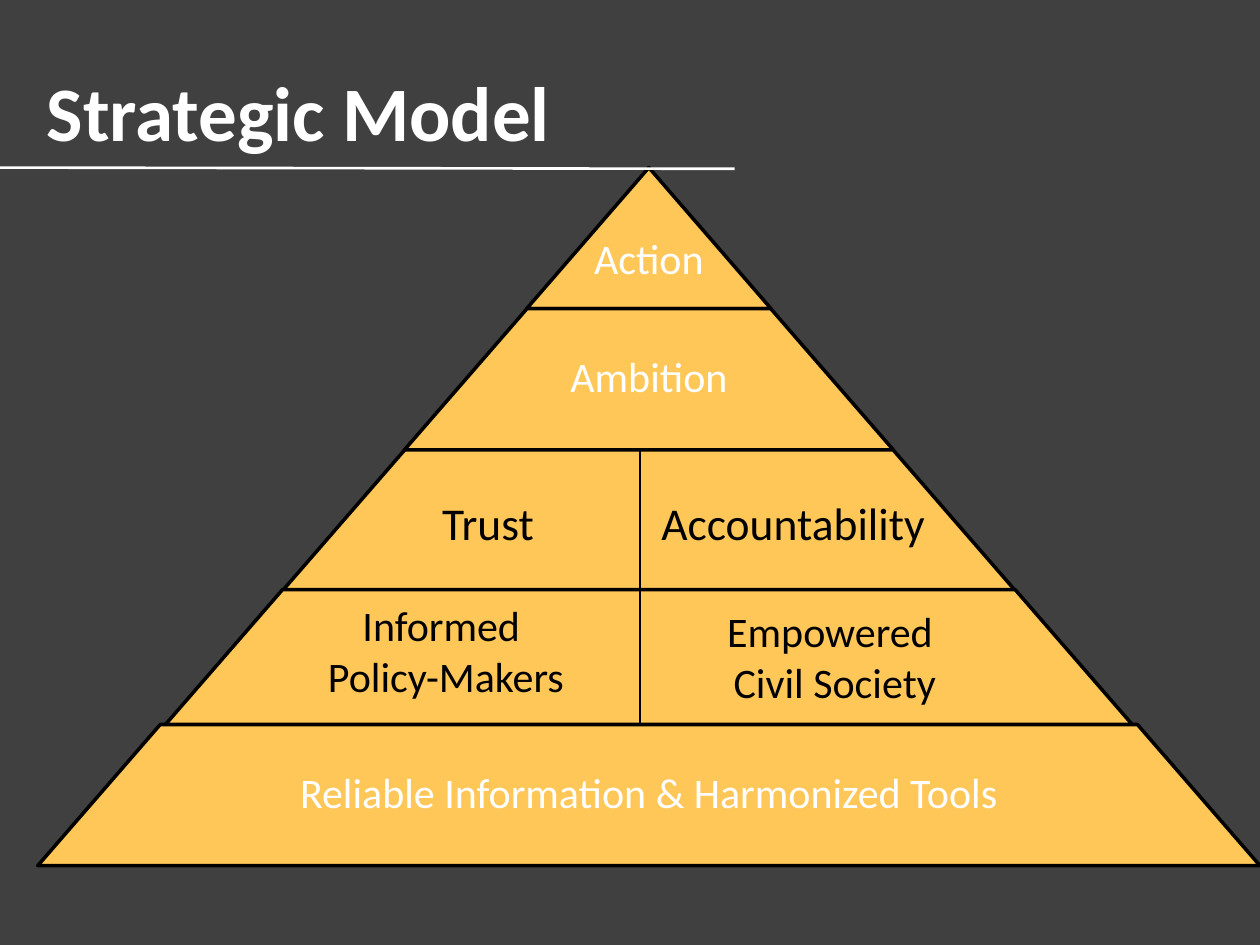
import pptx
import pptx.util
import pptx.dml.color
import pptx.enum.shapes
import pptx.enum.text
import pptx.oxml.ns
import lxml.etree

EMU_PER_PX = 9144
FONT = "Calibri"
CHARCOAL = pptx.dml.color.RGBColor(0x40, 0x40, 0x40)
AMBER = pptx.dml.color.RGBColor(0xFF, 0xC7, 0x58)
WHITE = pptx.dml.color.RGBColor(0xFF, 0xFF, 0xFF)
BLACK = pptx.dml.color.RGBColor(0x00, 0x00, 0x00)

TIER_STEP = 194
TIER_HEIGHT = 112
TIER_TOPS = (0, 112, 224, 335, 442)
TIER_SLOPE = 0.868
TIER_LABELS = (
    (0, "Action", 194, 39),
    (1, "Ambition", 252, 3),
    (4, "Reliable Information & Harmonized Tools", 630, 3),
)
HALF_LABELS = (
    ("Trust ", 278, 255, 167, 54, 26, True),
    ("Accountability", 462, 255, 275, 54, 26, True),
    ("Informed \nPolicy-Makers", 219, 338, 210, 91, 24, False),
    ("Empowered \nCivil Society", 478, 343, 309, 91, 24, True),
)
DIVIDERS = ((225, 334, 0.75), (334, 442, 1))


def px(length):
    return pptx.util.Emu(length * EMU_PER_PX)


def format_text(frame, size, color, bold=False):
    for paragraph in frame.paragraphs:
        paragraph.alignment = pptx.enum.text.PP_ALIGN.CENTER
        for run in paragraph.runs:
            run.font.name = FONT
            run.font.size = pptx.util.Pt(size)
            run.font.bold = bold
            run.font.color.rgb = color


def add_text(slide, text, left, top, width, height, size, color, wrap=True):
    shape = slide.shapes.add_textbox(px(left), px(top), px(width), px(height))
    frame = shape.text_frame
    frame.text = text
    frame.word_wrap = wrap
    format_text(frame, size, color)
    return frame


def add_line(slide, start, end, color, weight):
    connector = slide.shapes.add_connector(
        pptx.enum.shapes.MSO_CONNECTOR.STRAIGHT, *map(px, start + end)
    )
    connector.line.color.rgb = color
    connector.line.width = pptx.util.Pt(weight)
    properties = connector._element.spPr
    lxml.etree.SubElement(properties, pptx.oxml.ns.qn("a:effectLst"))


def add_tier(slide, left, top, width):
    shape = slide.shapes.add_shape(
        pptx.enum.shapes.MSO_SHAPE.TRAPEZOID,
        px(left), px(top), px(width), px(TIER_HEIGHT),
    )
    shape.adjustments[0] = TIER_SLOPE
    shape.shadow.inherit = False
    shape.fill.solid()
    shape.fill.fore_color.rgb = AMBER
    shape.line.color.rgb = BLACK
    shape.line.width = pptx.util.Pt(2)


def add_tier_label(slide, text, left, top, width, inset_top):
    frame = add_text(slide, text, left, top, width, TIER_HEIGHT, 24, WHITE)
    frame.vertical_anchor = pptx.enum.text.MSO_ANCHOR.MIDDLE
    frame.margin_left = frame.margin_right = frame.margin_bottom = px(3)
    frame.margin_top = px(inset_top)
    frame.paragraphs[0].line_spacing = 0.9


def add_pyramid(slide, left, top, width):
    center = left + width // 2
    for index, offset in enumerate(TIER_TOPS):
        tier_width = TIER_STEP * (index + 1)
        add_tier(slide, center - tier_width // 2, top + offset, tier_width)
    for index, text, label_width, inset_top in TIER_LABELS:
        add_tier_label(
            slide, text, center - label_width // 2, top + TIER_TOPS[index],
            label_width, inset_top,
        )
    for text, x, y, label_width, height, size, wrap in HALF_LABELS:
        add_text(
            slide, text, left + x, top + y, label_width, height, size, BLACK, wrap
        )
    divider_x = left + 478
    for start, end, weight in DIVIDERS:
        add_line(slide, (divider_x, top + start), (divider_x, top + end), BLACK, weight)


def add_heading(slide, text, left, top, width, height):
    title = slide.shapes.title
    title.left, title.top = px(left), px(top)
    title.width, title.height = px(width), px(height)
    title.text_frame.text = text
    title.text_frame.vertical_anchor = pptx.enum.text.MSO_ANCHOR.MIDDLE
    format_text(title.text_frame, 44, WHITE, True)
    add_line(slide, (0, top + 108), (583, top + 109), WHITE, 1.5)


def main():
    presentation = pptx.Presentation()
    presentation.slide_width = px(1000)
    presentation.slide_height = px(750)
    slide = presentation.slides.add_slide(presentation.slide_layouts[5])
    slide.background.fill.solid()
    slide.background.fill.fore_color.rgb = CHARCOAL
    add_pyramid(slide, 30, 133, 970)
    add_heading(slide, "Strategic Model", -67, 25, 608, 125)
    presentation.save("out.pptx")


if __name__ == "__main__":
    main()
